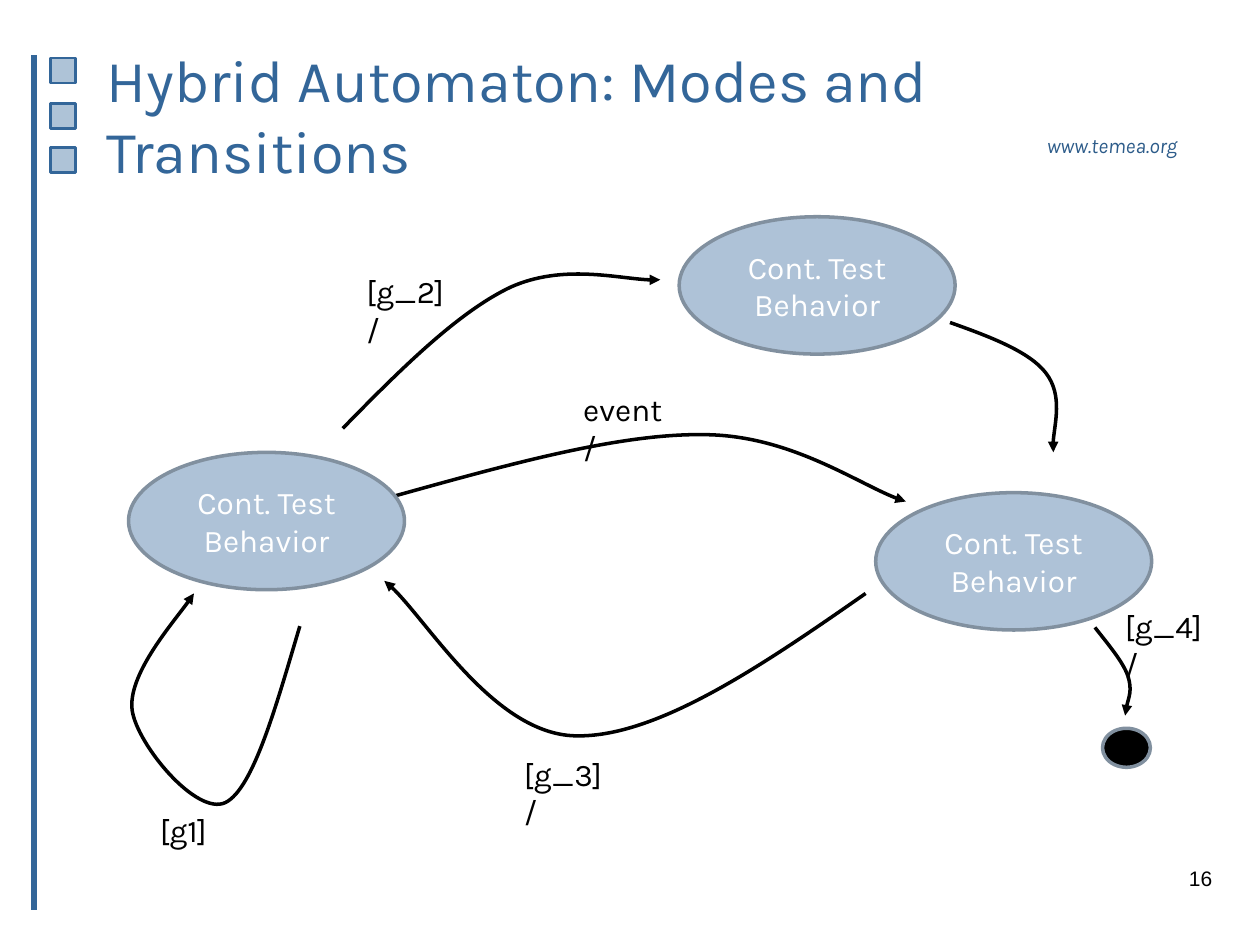
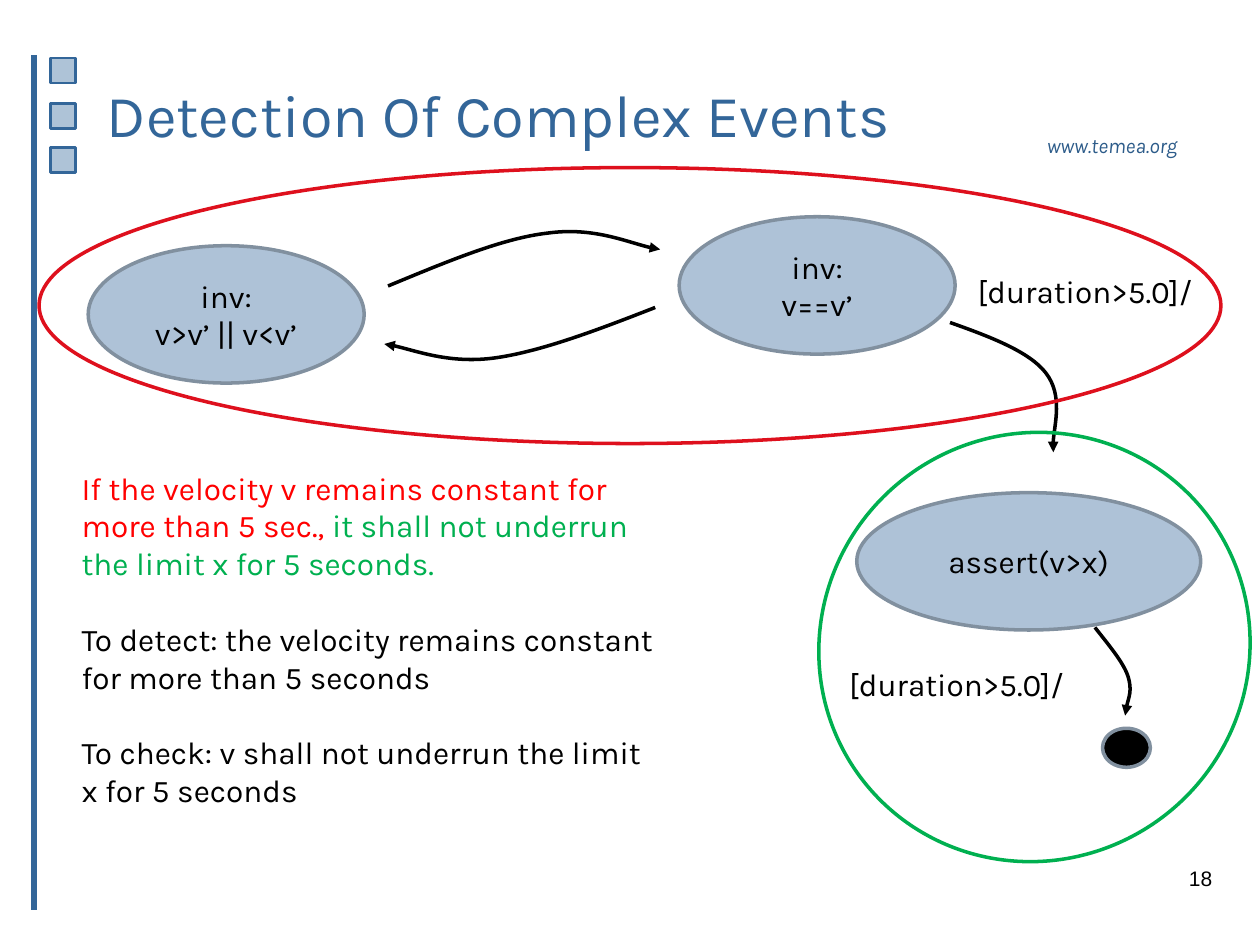
from lxml.etree import SubElement
from pptx import Presentation
from pptx.dml.color import RGBColor
from pptx.enum.shapes import MSO_CONNECTOR as Connector, MSO_SHAPE as Shape
from pptx.enum.text import MSO_ANCHOR as Anchor, PP_ALIGN as Align
from pptx.oxml.ns import qn
from pptx.util import Inches, Pt

# Colours
BLUE = "336699"
LINK_BLUE = "2D5C8A"
SQUARE_BLUE = "AEC3D7"
MODE_BLUE = "AEC2D7"
MODE_EDGE = "81909F"
BLACK = "000000"
WHITE = "FFFFFF"
RED = "FF0000"
RING_RED = "DE101D"
GREEN = "00B050"

MODE_SIZE = (2.19, 1.09)

# Curves used on both slides: start point, then triples of Bézier points
LEAVE_UPPER_MODE = [(7.54, 2.56), (7.85, 2.67), (8.17, 2.79), (8.3, 2.96),
                    (8.44, 3.14), (8.34, 3.48), (8.36, 3.59)]
REACH_END = [(8.69, 4.98), (8.8, 5.12), (8.91, 5.25), (8.95, 5.36),
             (8.99, 5.48), (8.93, 5.62), (8.93, 5.68)]


def rgb(code):
    return RGBColor.from_string(code)


class Deck:
    """Holds the shared style and the slide being drawn."""

    def __init__(self):
        self.prs = Presentation()
        self.prs.slide_width = Inches(10)
        self.prs.slide_height = Inches(7.5)
        self.slide = None

    def new_slide(self, title, number):
        self.slide = self.prs.slides.add_slide(self.prs.slide_layouts[6])
        # Left band with three squares
        self.rule((0.27, 0.44), (0.27, 7.22))
        for top in (0.46, 0.82, 1.17):
            self.shape(Shape.RECTANGLE, (0.4, top, 0.2, 0.2),
                       SQUARE_BLUE, BLUE, 1.5)
        # Address, title and page number
        self.text((8.21, 1, 1.56, 0.3), "www.temea.org", 12, LINK_BLUE,
                  italic=True)
        self.text((0.75, 0.28, 7.32, 1.25), title, 34, BLUE,
                  anchor=Anchor.MIDDLE)
        self.text((7.39, 6.82, 2.33, 0.39), number, 12, BLACK, font="Arial",
                  align=Align.RIGHT)

    def format_run(self, run, size, color, font="Karla", italic=False):
        run.font.size = Pt(size)
        run.font.name = font
        run.font.italic = italic
        run.font.color.rgb = rgb(color)

    def fill_frame(self, frame, text, size, color, align=Align.LEFT,
                   anchor=Anchor.TOP, **run_style):
        frame.text = text
        frame.word_wrap = True
        frame.vertical_anchor = anchor
        for paragraph in frame.paragraphs:
            paragraph.alignment = align
            for run in paragraph.runs:
                self.format_run(run, size, color, **run_style)

    def text(self, box, text, size=18, color=BLACK, **style):
        frame = self.slide.shapes.add_textbox(*map(Inches, box)).text_frame
        self.fill_frame(frame, text, size, color, **style)
        return frame

    def rule(self, start, end):
        rule = self.slide.shapes.add_connector(
            Connector.STRAIGHT, *map(Inches, start + end))
        rule.line.color.rgb = rgb(BLUE)
        rule.line.width = Pt(3)
        SubElement(rule._element.spPr, qn("a:effectLst"))

    def shape(self, kind, box, fill, edge, width=2.0):
        shape = self.slide.shapes.add_shape(kind, *map(Inches, box))
        shape.shadow.inherit = False
        if fill:
            shape.fill.solid()
            shape.fill.fore_color.rgb = rgb(fill)
        else:
            shape.fill.background()
        shape.line.color.rgb = rgb(edge)
        shape.line.width = Pt(width)
        return shape

    def mode(self, left, top, text, color, size=MODE_SIZE):
        mode = self.shape(Shape.OVAL, (left, top) + size, MODE_BLUE, MODE_EDGE)
        self.fill_frame(mode.text_frame, text, 18, color, Align.CENTER,
                        Anchor.MIDDLE)

    def end_state(self):
        self.shape(Shape.OVAL, (8.75, 5.78, 0.38, 0.31), BLACK, MODE_EDGE)

    def ring(self, box, color, rotation=0.0):
        self.shape(Shape.OVAL, box, None, color).rotation = rotation

    def transition(self, points):
        start, *rest = [(Inches(x), Inches(y)) for x, y in points]
        builder = self.slide.shapes.build_freeform(*start)
        builder.add_line_segments(rest, close=False)
        arrow = builder.convert_to_shape()
        arrow.shadow.inherit = False
        arrow.fill.background()
        arrow.line.color.rgb = rgb(BLACK)
        arrow.line.width = Pt(2)
        # Turn each three straight segments into one Bézier curve
        path = arrow._element.find(".//" + qn("a:path"))
        segments = path.findall(qn("a:lnTo"))
        for first in range(0, len(segments), 3):
            curve = SubElement(path, qn("a:cubicBezTo"))
            for segment in segments[first:first + 3]:
                curve.append(segment[0])
                path.remove(segment)
        outline = arrow._element.spPr.find(qn("a:ln"))
        SubElement(outline, qn("a:tailEnd"), type="triangle")


def modes_and_transitions(deck):
    deck.new_slide("Hybrid Automaton: Modes and Transitions", "16")

    # Transitions
    left_to_upper = [(2.72, 3.4), (3.17, 2.94), (3.63, 2.48), (4.05, 2.28),
                     (4.47, 2.09), (5.02, 2.24), (5.24, 2.22)]
    left_to_right = [(3.12, 3.94), (4.02, 3.69), (4.91, 3.44), (5.58, 3.45),
                     (6.26, 3.45), (6.88, 3.89), (7.19, 3.98)]
    right_to_left = [(6.87, 4.71), (6.04, 5.29), (5.2, 5.86), (4.56, 5.84),
                     (3.92, 5.82), (3.33, 4.82), (3.05, 4.61)]
    self_loop = [(2.38, 4.97), (2.19, 5.61), (2.01, 6.26), (1.79, 6.37),
                 (1.56, 6.48), (1.09, 5.91), (1.05, 5.64),
                 (1.01, 5.36), (1.46, 4.84), (1.54, 4.71)]
    for curve in (left_to_upper, left_to_right, right_to_left,
                  LEAVE_UPPER_MODE, self_loop, REACH_END):
        deck.transition(curve)

    # Guards and events
    for left, top, width, guard in (
            (2.81, 2.11, 0.91, "[g_2]/"), (4.06, 5.94, 0.91, "[g_3]/"),
            (1.17, 6.39, 0.67, "[g1]"), (4.53, 3.05, 0.91, "event/"),
            (8.83, 4.77, 0.91, "[g_4]/")):
        deck.text((left, top, width, 0.4), guard)

    # Modes
    deck.end_state()
    for left, top in ((5.39, 1.72), (1.02, 3.59), (6.95, 3.91)):
        deck.mode(left, top, "Cont. Test\nBehavior", WHITE)


def complex_events(deck):
    deck.new_slide("Detection Of Complex Events", "18")

    # Transitions
    become_constant = [(3.08, 2.27), (3.54, 2.08), (3.99, 1.89), (4.35, 1.85),
                       (4.71, 1.8), (5.07, 1.96), (5.24, 1.98)]
    become_variable = [(5.2, 2.44), (4.74, 2.62), (4.29, 2.79), (3.93, 2.84),
                       (3.57, 2.89), (3.21, 2.75), (3.05, 2.73)]
    for curve in (become_constant, become_variable, LEAVE_UPPER_MODE,
                  REACH_END):
        deck.transition(curve)

    # Modes and guards
    deck.end_state()
    deck.mode(5.39, 1.72, "inv:\nv==v’", BLACK)
    deck.mode(0.7, 1.95, "inv:\nv>v’ || v<v’", BLACK)
    deck.mode(6.8, 3.91, "assert(v>x)", BLACK, (2.73, 1.09))
    for left, top in ((6.64, 5.23), (7.66, 2.11)):
        deck.text((left, top, 1.95, 0.4), "[duration>5.0]/")

    # Requirement and its two parts
    requirement = deck.text(
        (0.55, 3.67, 4.77, 3.13),
        "If the velocity v remains constant for more than 5 sec., \n"
        "To detect: the velocity remains constant for more than 5 seconds\n"
        "To check: v shall not underrun the limit x for 5 seconds")
    condition, *parts = requirement.paragraphs
    condition.runs[0].font.color.rgb = rgb(RED)
    consequence = condition.add_run()
    consequence.text = "it shall not underrun the limit x for 5 seconds."
    deck.format_run(consequence, 18, GREEN)
    for part in parts:
        part.space_before = Pt(21.6)

    # Rings around the detecting and the checking part
    deck.ring((0.31, 1.33, 9.38, 2.19), RING_RED)
    deck.ring((6.52, 3.41, 3.38, 3.45), GREEN, 51.6)


def main():
    deck = Deck()
    modes_and_transitions(deck)
    complex_events(deck)
    deck.prs.save("out.pptx")


if __name__ == "__main__":
    main()
